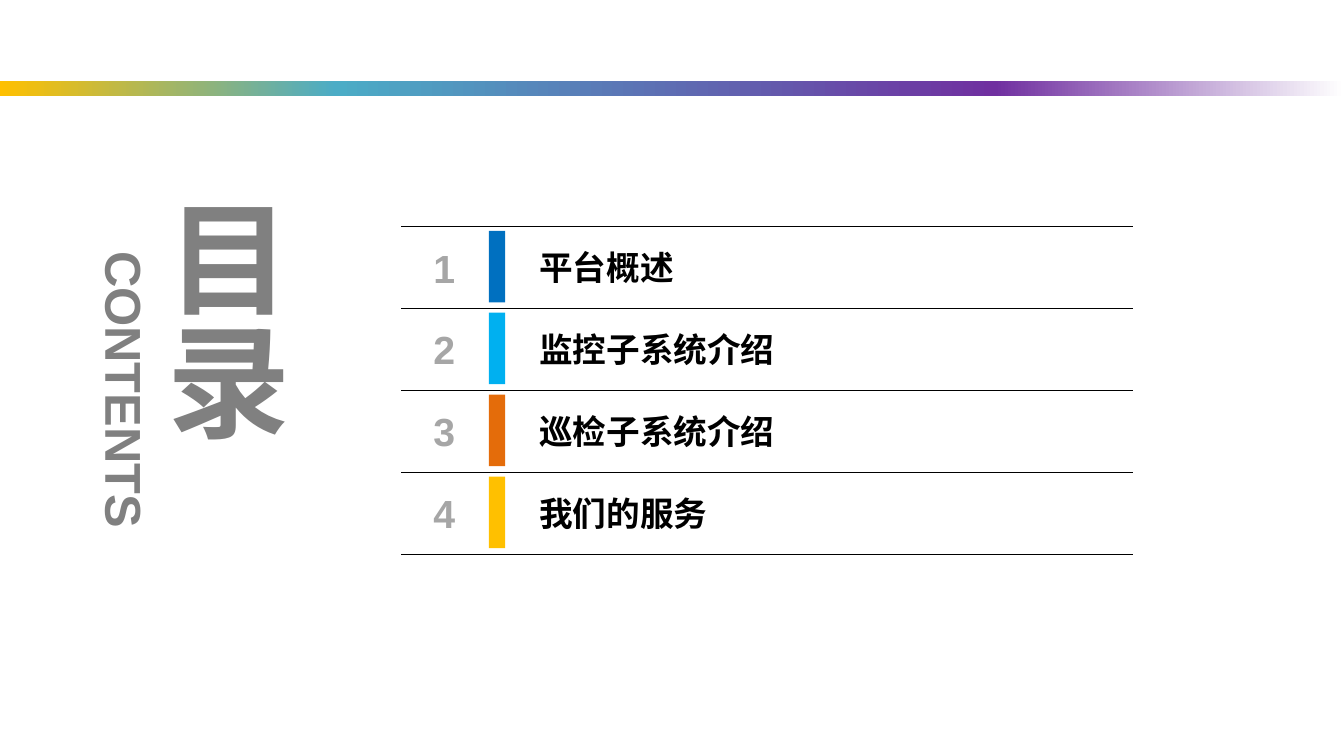
from lxml import etree
from pptx import Presentation
from pptx.dml.color import RGBColor
from pptx.enum.shapes import MSO_CONNECTOR, MSO_SHAPE
from pptx.enum.text import MSO_ANCHOR, MSO_AUTO_SIZE, PP_ALIGN
from pptx.oxml.ns import qn
from pptx.util import Inches, Pt

BLACK = RGBColor(0x00, 0x00, 0x00)
TITLE_GRAY = RGBColor(0x80, 0x80, 0x80)
NUMBER_GRAY = RGBColor(0xA6, 0xA6, 0xA6)
BLUE = RGBColor(0x00, 0x70, 0xC0)
SKY = RGBColor(0x00, 0xB0, 0xF0)
ORANGE = RGBColor(0xE4, 0x6C, 0x0A)
GOLD = RGBColor(0xFF, 0xC0, 0x00)
TEAL = RGBColor(0x4B, 0xAC, 0xC6)
PURPLE = RGBColor(0x70, 0x30, 0xA0)
WHITE = RGBColor(0xFF, 0xFF, 0xFF)

LATIN_FONT = "Arial"
CHINESE_FONT = "Noto Sans CJK SC"

BAND_STOPS = [(0, GOLD), (25, TEAL), (74, PURPLE), (100, WHITE)]
CHAPTERS = [
    ("平台概述", BLUE),
    ("监控子系统介绍", SKY),
    ("巡检子系统介绍", ORANGE),
    ("我们的服务", GOLD),
]
LIST_TOP = 2.25
ROW_HEIGHT = 0.8125


def add_bar(page, left, top, width, height):
    bar = page.shapes.add_shape(
        MSO_SHAPE.RECTANGLE, Inches(left), Inches(top), Inches(width), Inches(height))
    bar.shadow.inherit = False
    bar.line.fill.background()
    return bar


def set_gradient(shape, stops):
    """Fill a shape from left to right with (percent, colour) stops."""
    shape.fill.gradient()
    shape.fill.gradient_angle = 0
    stop_list = shape.element.spPr.find(qn("a:gradFill")).find(qn("a:gsLst"))
    for old_stop in list(stop_list):
        stop_list.remove(old_stop)
    for percent, color in stops:
        stop = etree.SubElement(stop_list, qn("a:gs"), pos=str(percent * 1000))
        etree.SubElement(stop, qn("a:srgbClr"), val=str(color))


def add_text(page, text, left, top, width, height, size, color, font=LATIN_FONT, wrap=True):
    box = page.shapes.add_textbox(Inches(left), Inches(top), Inches(width), Inches(height))
    frame = box.text_frame
    frame.word_wrap = wrap
    frame.auto_size = MSO_AUTO_SIZE.SHAPE_TO_FIT_TEXT
    span = frame.paragraphs[0].add_run()
    span.text = text
    span.font.name = font
    span.font.size = Pt(size)
    span.font.bold = True
    span.font.color.rgb = color
    etree.SubElement(span.font._element, qn("a:ea"), typeface=font)
    return box


def center_without_margins(box):
    frame = box.text_frame
    frame.margin_left = frame.margin_right = 0
    frame.margin_top = frame.margin_bottom = 0
    frame.paragraphs[0].alignment = PP_ALIGN.CENTER


def add_rule(page, top):
    rule = page.shapes.add_connector(
        MSO_CONNECTOR.STRAIGHT, Inches(3.98), Inches(top), Inches(11.24), Inches(top))
    rule.line.color.rgb = BLACK
    rule.line.width = Pt(0.75)
    etree.SubElement(rule.element.spPr, qn("a:effectLst"))


def add_chapter(page, number, name, color, top):
    bar = add_bar(page, 4.85, top + 0.04, 0.16, 0.71)
    bar.fill.solid()
    bar.fill.fore_color.rgb = color
    add_text(page, str(number), 4.2, top + 0.12, 0.43, 0.57, 28, NUMBER_GRAY, wrap=False)
    add_text(page, name, 5.25, top + 0.15, 5.62, 0.5, 24, BLACK, CHINESE_FONT)


def add_title(page):
    title = add_text(page, "目录", 1.49, 1.96, 1.48, 3.82, 88, TITLE_GRAY)
    center_without_margins(title)
    title.text_frame.vertical_anchor = MSO_ANCHOR.MIDDLE
    title.text_frame._txBody.bodyPr.set("vert", "eaVert")

    subtitle = add_text(page, "CONTENTS", -0.42, 3.56, 3.32, 0.61, 36, TITLE_GRAY)
    center_without_margins(subtitle)
    subtitle.rotation = 90


def main():
    deck = Presentation()
    deck.slide_width = Inches(13.33)
    deck.slide_height = Inches(7.5)
    page = deck.slides.add_slide(deck.slide_layouts[6])

    set_gradient(add_bar(page, 0, 0.8, 13.33, 0.15), BAND_STOPS)
    for index, (name, color) in enumerate(CHAPTERS):
        add_chapter(page, index + 1, name, color, LIST_TOP + index * ROW_HEIGHT)
    for index in range(len(CHAPTERS) + 1):
        add_rule(page, LIST_TOP + index * ROW_HEIGHT)
    add_title(page)
    deck.save("out.pptx")


if __name__ == "__main__":
    main()
